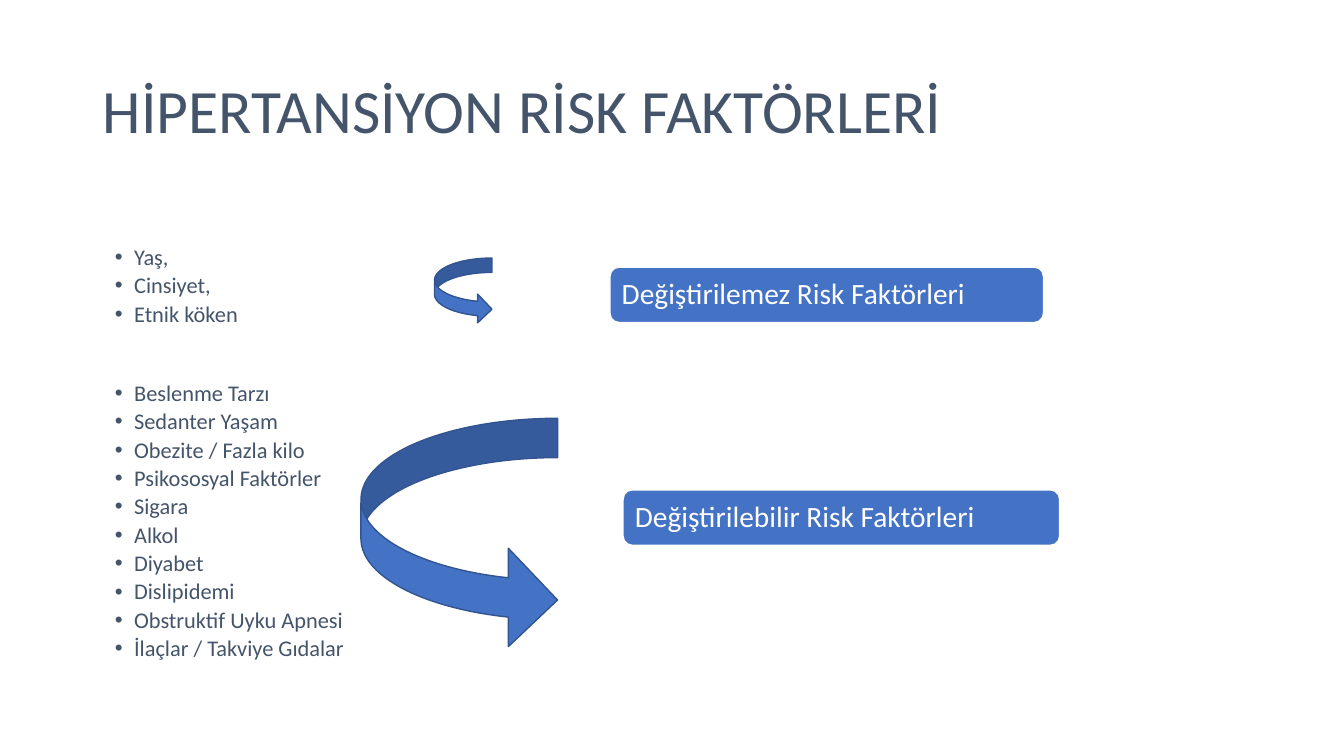
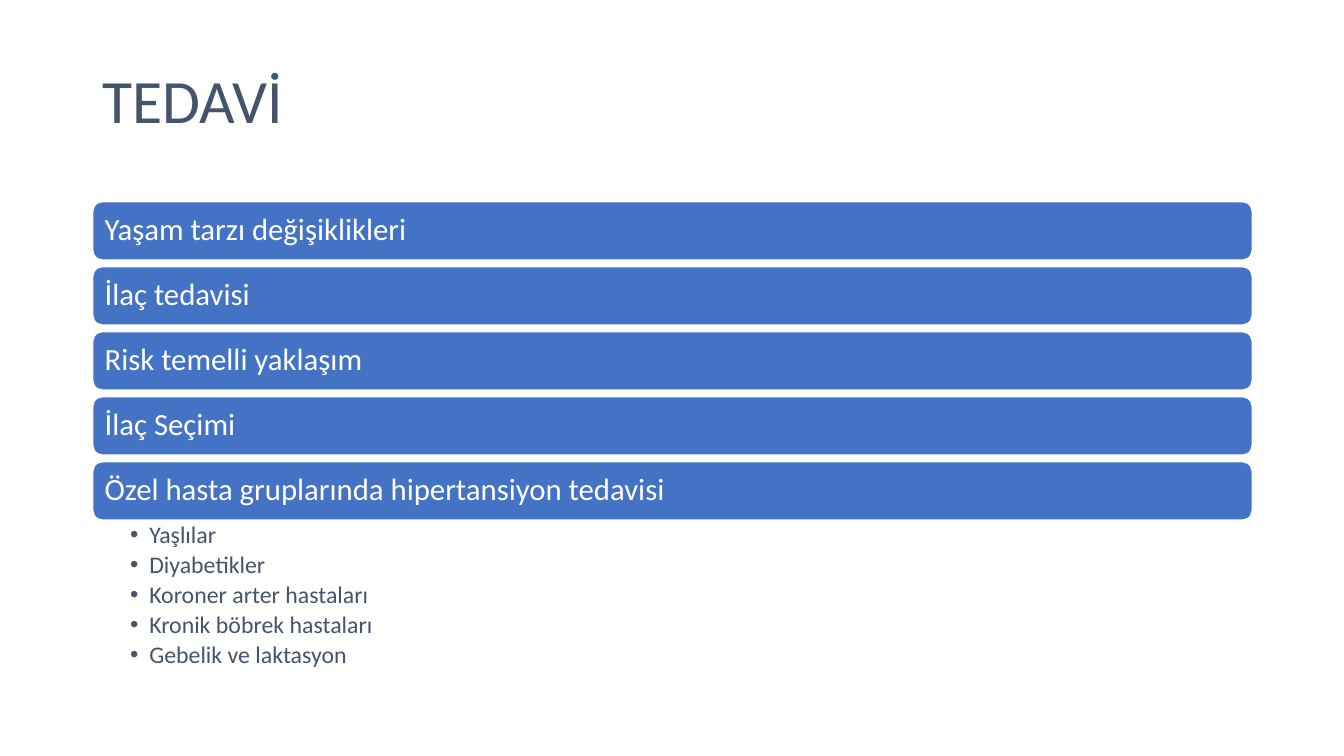
from pptx import Presentation
from pptx.dml.color import RGBColor
from pptx.enum.shapes import MSO_SHAPE
from pptx.enum.text import MSO_ANCHOR, MSO_AUTO_SIZE, PP_ALIGN
from pptx.util import Inches, Pt

ROUNDED = MSO_SHAPE.ROUNDED_RECTANGLE
CURVED_ARROW = MSO_SHAPE.CURVED_RIGHT_ARROW
TOP, MIDDLE = MSO_ANCHOR.TOP, MSO_ANCHOR.MIDDLE
LEFT = PP_ALIGN.LEFT
NO_AUTOFIT = MSO_AUTO_SIZE.NONE

FONT = "Calibri"
COLORS = {
    "text": "44546A",
    "accent": "4472C4",
    "accent_edge": "325491",
    "white": "FFFFFF",
}
TITLE_ONLY_LIST, TWO_LISTS = 1, 3  # layout numbers in the default template
BULLET_INDENT = Inches(0.19)

TITLE_FRAME = {"vertical_anchor": MIDDLE}
BAR_FRAME = {
    "vertical_anchor": MIDDLE,
    "margin_left": Inches(0.09),
    "margin_right": Inches(0.09),
}
LIST_FRAME = {
    "vertical_anchor": TOP,
    "margin_left": Inches(0.37),
    "margin_right": Inches(0.16),
    "margin_top": Inches(0.03),
    "margin_bottom": Inches(0.03),
}
PARAGRAPH = {"alignment": LEFT, "line_spacing": 0.9, "space_before": Pt(0)}

RISK_GROUPS = [
    {
        "label": "Değiştirilemez Risk Faktörleri",
        "factors": ["Yaş,", "Cinsiyet,", "Etnik köken"],
        "list_box": (0.77, 2.41, 11.64, 0.9),
        "bar_box": (6.05, 2.65, 4.3, 0.55),
        "arrow_box": (4.31, 2.56, 0.57, 0.65),
        "band": 0.25,
    },
    {
        "label": "Değiştirilebilir Risk Faktörleri",
        "factors": [
            "Beslenme Tarzı", "Sedanter Yaşam", "Obezite / Fazla kilo",
            "Psikososyal Faktörler", "Sigara", "Alkol", "Diyabet",
            "Dislipidemi", "Obstruktif Uyku Apnesi",
            "İlaçlar / Takviye Gıdalar",
        ],
        "list_box": (0.77, 3.76, 11.64, 2.99),
        "bar_box": (6.18, 4.86, 4.33, 0.55),
        "arrow_box": (3.58, 4.15, 1.95, 2.29),
        "band": 0.2,
    },
]
TREATMENTS = [
    "Yaşam tarzı değişiklikleri", "İlaç tedavisi", "Risk temelli yaklaşım",
    "İlaç Seçimi", "Özel hasta gruplarında hipertansiyon tedavisi",
]
PATIENT_GROUPS = [
    "Yaşlılar", "Diyabetikler", "Koroner arter hastaları",
    "Kronik böbrek hastaları", "Gebelik ve laktasyon",
]


def apply(target, values):
    for name, value in values.items():
        setattr(target, name, value)


def rgb(name):
    return RGBColor.from_string(COLORS[name])


def place(shape, box):
    names = ("left", "top", "width", "height")
    apply(shape, dict(zip(names, map(Inches, box))))


def write_lines(shape, lines, size, color, frame_format, space_after=0):
    frame = shape.text_frame
    frame.text = "\n".join(lines)
    apply(frame, {"word_wrap": True, "auto_size": NO_AUTOFIT, **frame_format})
    for paragraph in frame.paragraphs:
        apply(paragraph, {**PARAGRAPH, "space_after": Pt(space_after)})
        for run in paragraph.runs:
            apply(run.font, {"name": FONT, "size": Pt(size)})
            run.font.color.rgb = rgb(color)


def add_accent_shape(slide, kind, box, edge):
    shape = slide.shapes.add_shape(kind, *map(Inches, box))
    shape.shadow.inherit = False
    shape.fill.solid()
    shape.fill.fore_color.rgb = rgb("accent")
    shape.line.color.rgb = rgb(edge)
    shape.line.width = Pt(1)
    return shape


def add_bar(slide, label, box, size):
    bar = add_accent_shape(slide, ROUNDED, box, "white")
    write_lines(bar, [label], size, "white", BAR_FRAME)


def add_curved_arrow(slide, box, band):
    arrow = add_accent_shape(slide, CURVED_ARROW, box, "accent_edge")
    arrow.adjustments[0] = band


def fill_list(placeholder, items, box, size):
    place(placeholder, box)
    write_lines(placeholder, items, size, "text", LIST_FRAME, space_after=3)
    for paragraph in placeholder.text_frame.paragraphs:
        properties = paragraph._p.get_or_add_pPr()
        properties.set("marL", str(BULLET_INDENT))
        properties.set("indent", str(-BULLET_INDENT))


def add_titled_slide(deck, layout, title, top):
    slide = deck.slides.add_slide(deck.slide_layouts[layout])
    place(slide.shapes.title, (0.92, top, 11.5, 1.45))
    write_lines(slide.shapes.title, [title], 44, "text", TITLE_FRAME)
    return slide


def add_bar_stack(slide, labels, box, bar_height, size):
    left, top, width, height = box
    pitch = (height - bar_height) / (len(labels) - 1)
    for row, label in enumerate(labels):
        add_bar(slide, label, (left, top + row * pitch, width, bar_height), size)


def add_risk_slide(deck):
    slide = add_titled_slide(deck, TWO_LISTS, "HİPERTANSİYON RİSK FAKTÖRLERİ", 0.4)
    for number, group in enumerate(RISK_GROUPS, start=1):
        fill_list(slide.placeholders[number], group["factors"], group["list_box"], 16)
        add_bar(slide, group["label"], group["bar_box"], 21)
        add_curved_arrow(slide, group["arrow_box"], group["band"])


def add_treatment_slide(deck):
    slide = add_titled_slide(deck, TITLE_ONLY_LIST, "TEDAVİ", 0.3)
    add_bar_stack(slide, TREATMENTS, (0.92, 2, 11.5, 3.16), 0.58, 22)
    fill_list(slide.placeholders[1], PATIENT_GROUPS, (0.92, 5.16, 11.5, 1.59), 17)


def main():
    deck = Presentation()
    apply(deck, {"slide_width": Inches(13.33), "slide_height": Inches(7.5)})
    add_risk_slide(deck)
    add_treatment_slide(deck)
    deck.save("out.pptx")


if __name__ == "__main__":
    main()
